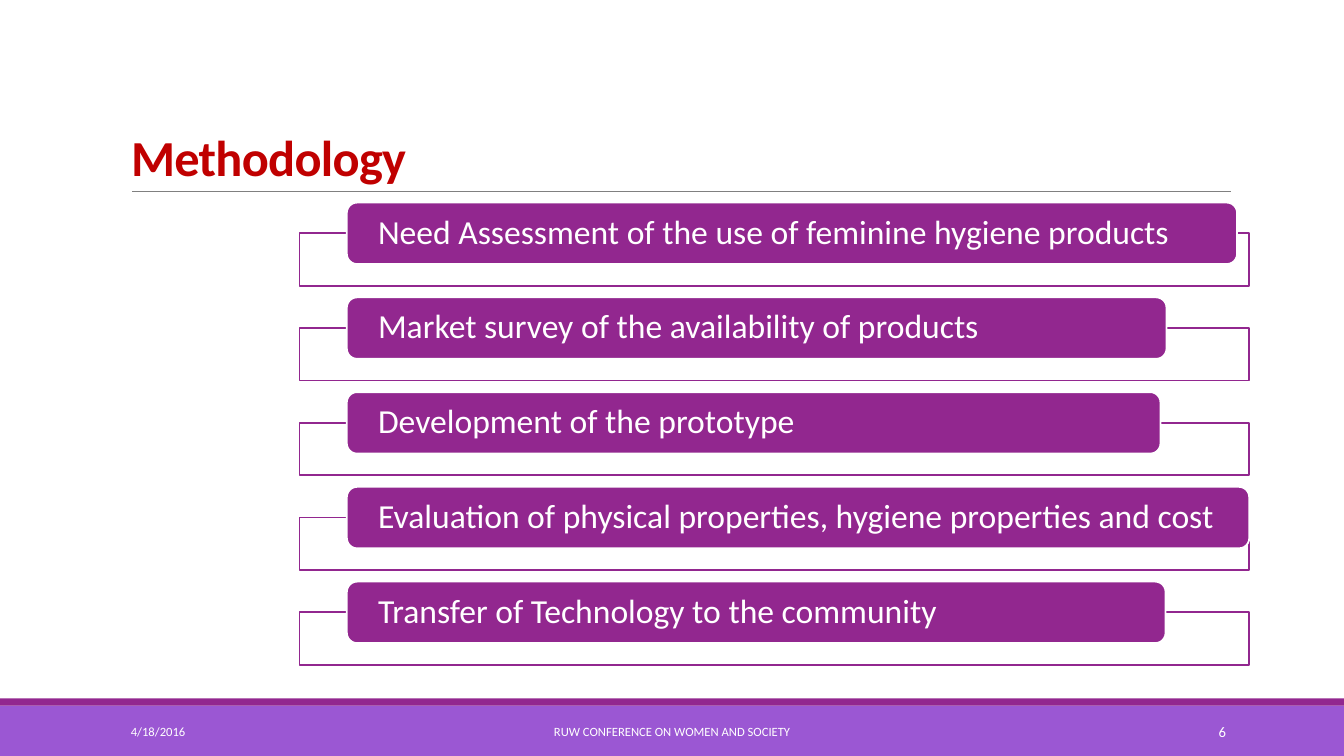
from dataclasses import dataclass

from lxml.etree import SubElement
from pptx import Presentation
from pptx.dml.color import RGBColor
from pptx.enum.shapes import MSO_CONNECTOR as Connector, MSO_SHAPE as Shape
from pptx.enum.text import MSO_ANCHOR as Anchor, MSO_AUTO_SIZE as AutoSize, PP_ALIGN as Align
from pptx.oxml.ns import qn
from pptx.util import Inches, Pt


@dataclass(frozen=True)
class Theme:
    font: str = "Calibri"
    white: str = "FFFFFF"
    purple: str = "92278F"
    violet: str = "9B57D3"
    red: str = "C00000"
    grey: str = "808080"
    title_size: float = 36
    step_size: float = 24
    footer_size: float = 9
    number_size: float = 10.5
    outline: float = 1.25


THEME = Theme()
WIDTH, HEIGHT = 13.33, 7.5

# Grid of the step list: one row per step
FRAME_LEFT, FRAME_WIDTH, FRAME_HEIGHT = 2.97, 9.42, 0.52
BAR_LEFT, BAR_HEIGHT = 3.44, 0.61
FIRST_ROW, ROW_PITCH = 2.01, 0.94
STEPS = [
    ("Need Assessment of the use of feminine hygiene products", 8.83),
    ("Market survey of the availability of products", 8.13),
    ("Development of the prototype", 8.07),
    ("Evaluation of physical properties, hygiene properties and cost", 8.95),
    ("Transfer of Technology to the community", 8.12),
]

# Footer: text, left, width, alignment, size
FOOTER = [
    ("4/18/2016", 1.2, 2.7, Align.LEFT, THEME.footer_size),
    ("RUW CONFERENCE ON WOMEN AND SOCIETY", 4.03, 5.27, Align.CENTER, THEME.footer_size),
    ("6", 10.83, 1.43, Align.RIGHT, THEME.number_size),
]


def rgb(color):
    return RGBColor.from_string(color)


def set_all(target, values):
    for name, value in values.items():
        setattr(target, name, value)


def write(shape, text, size, color=THEME.white, anchor=Anchor.MIDDLE, inset=(0.1, 0.05),
          bold=False, wrap=True, **paragraph_format):
    frame = shape.text_frame
    side, end = map(Inches, inset)
    set_all(frame, {"auto_size": AutoSize.NONE, "word_wrap": wrap, "vertical_anchor": anchor,
                    "margin_left": side, "margin_right": side,
                    "margin_top": end, "margin_bottom": end})
    paragraph = frame.paragraphs[0]
    set_all(paragraph, {"alignment": Align.LEFT, **paragraph_format})
    run = paragraph.add_run()
    run.text = text
    set_all(run.font, {"name": THEME.font, "size": Pt(size), "bold": bold})
    run.font.color.rgb = rgb(color)
    return run


def add_box(slide, kind, box, fill, line=None):
    shape = slide.shapes.add_shape(kind, *map(Inches, box))
    shape.shadow.inherit = False
    shape.fill.solid()
    shape.fill.fore_color.rgb = rgb(fill)
    if line:
        shape.line.color.rgb = rgb(line)
        shape.line.width = Pt(THEME.outline)
    else:
        shape.line.fill.background()
    return shape


def add_rule(slide, left, right, top):
    rule = slide.shapes.add_connector(
        Connector.STRAIGHT, *map(Inches, (left, top, right, top)))
    rule.line.color.rgb = rgb(THEME.grey)
    rule.line.width = Pt(0.5)
    SubElement(rule.element.spPr, qn("a:effectLst"))


def add_title(slide, text):
    title = slide.shapes.title
    box = map(Inches, (1.2, 1.08, 6.73, 0.82))
    set_all(title, dict(zip(("left", "top", "width", "height"), box)))
    run = write(title, text, THEME.title_size, THEME.red, Anchor.BOTTOM,
                bold=True, line_spacing=0.85)
    run.font._element.set("spc", "-50")


def add_step(slide, row, text, width):
    top = FIRST_ROW + row * ROW_PITCH
    frame_top = top + BAR_HEIGHT / 2
    add_box(slide, Shape.RECTANGLE, (FRAME_LEFT, frame_top, FRAME_WIDTH, FRAME_HEIGHT),
            THEME.white, THEME.purple)
    bar = add_box(slide, Shape.ROUNDED_RECTANGLE, (BAR_LEFT, top, width, BAR_HEIGHT),
                  THEME.purple, THEME.white)
    write(bar, text, THEME.step_size, inset=(0.28, 0.03), line_spacing=0.9)


def add_footer(slide):
    for text, left, width, alignment, size in FOOTER:
        box = slide.shapes.add_textbox(*map(Inches, (left, 7.06, width, 0.4)))
        write(box, text, size, alignment=alignment)


def main():
    presentation = Presentation()
    set_all(presentation, {"slide_width": Inches(WIDTH), "slide_height": Inches(HEIGHT)})
    slide = presentation.slides.add_slide(presentation.slide_layouts[5])

    # Bands at the foot and the rule under the title
    add_box(slide, Shape.RECTANGLE, (0, 7, WIDTH, 0.5), THEME.violet)
    add_box(slide, Shape.RECTANGLE, (0, 6.93, WIDTH, 0.07), THEME.purple)
    add_rule(slide, 1.31, 12.21, 1.9)

    # Title, steps and footer
    add_title(slide, "Methodology")
    for row, (text, width) in enumerate(STEPS):
        add_step(slide, row, text, width)
    add_footer(slide)

    presentation.save("out.pptx")


if __name__ == "__main__":
    main()
